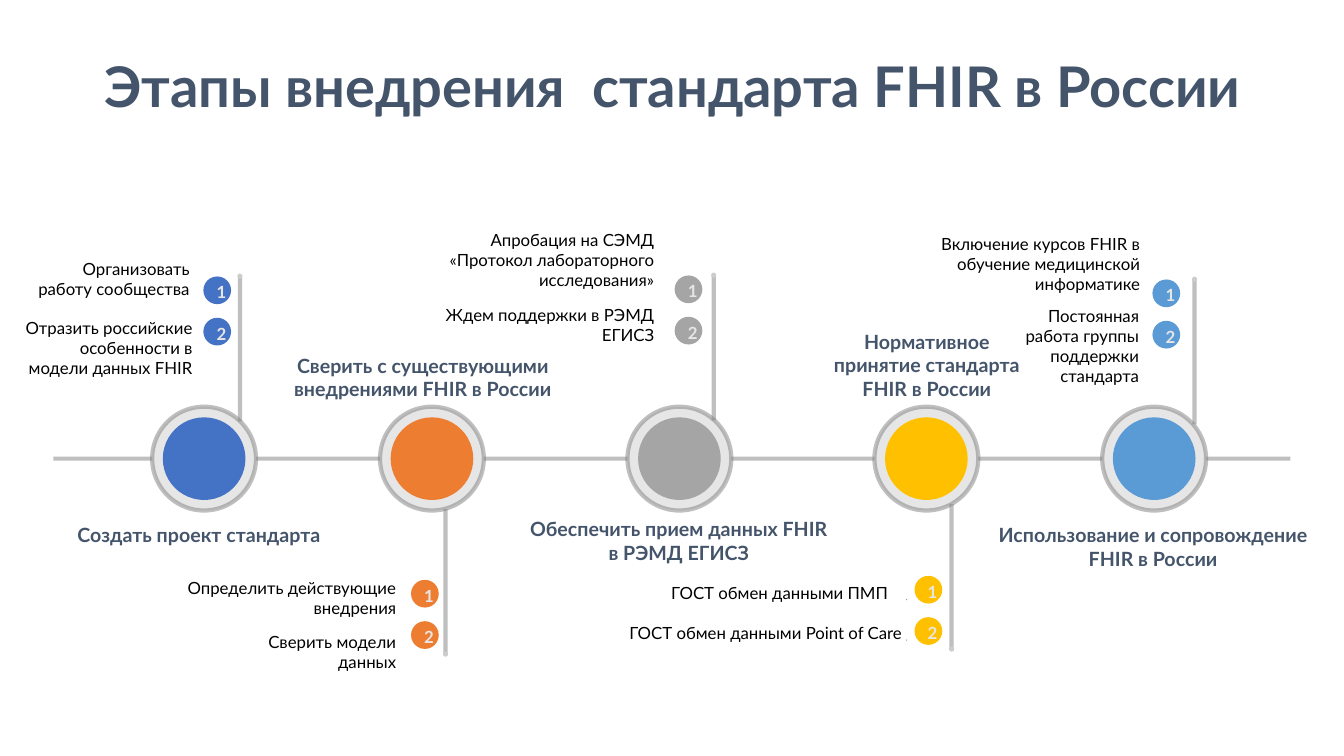
"""Build the slide on the stages of adopting FHIR in Russia."""
from dataclasses import dataclass

import pptx
import pptx.dml.color
import pptx.enum.shapes
import pptx.enum.text
import pptx.oxml.ns
import pptx.util
from lxml import etree


@dataclass(frozen=True)
class Theme:
    face: str = "Lato"
    ink: str = "000000"
    head: str = "44546A"
    pale: str = "E7E6E6"
    rule: str = "808080"
    knob: str = "CCCCCC"
    speck: str = "606060"
    title: int = 40
    stage: int = 14
    note: int = 12
    line: int = 3
    alpha: int = 50000


TITLE = "Этапы внедрения  стандарта FHIR в России"
TITLE_BOX = (6.5, 4.6, 120.4, 7.7)
AXIS = (5.3, 128, 45.5)
RING, DISC, PIP, KNOB, DOT = 10.3, 8.2, 2.75, 0.5, 0.1
STEM, STEP, DIGIT = 14.4, 4.1, 2.1
SPECKS = [(89.95, 59.5), (89.95, 63.5)]

STAGES = [
    dict(hue="4472C4", mid=20.25, stem=(23.8, 41.8, -1), pip=(21.55, 28.8),
         head=("Создать проект стандарта", 6.6, 51.4, 26.3, 1),
         notes=[("Организовать работу сообщества", 1.9, 25.2, 17.9, 2),
                ("Отразить российские особенности в модели данных FHIR",
                 0.6, 31, 19.5, 3)]),
    dict(hue="ED7D31", mid=42.85, stem=(44.2, 50.5, 1), pip=(42.15, 58.9),
         head=("Сверить с существующими внедрениями FHIR в России",
               26.5, 34.6, 30.9, 2),
         notes=[("Определить действующие внедрения", 16.1, 56.8, 24.2, 2),
                ("Сверить модели данных", 24.6, 62.2, 15.7, 2)]),
    dict(hue="A5A5A5", mid=67.4, stem=(70.8, 41.7, -1), pip=(68.3, 28.7),
         head=("Обеспечить прием данных FHIR в РЭМД ЕГИСЗ",
               51.5, 50.8, 31.7, 2),
         notes=[("Апробация на СЭМД «Протокол лабораторного исследования»",
                 41.3, 22.3, 24.6, 3),
                ("Ждем поддержки в РЭМД ЕГИСЗ", 40.4, 29.7, 25.5, 2)]),
    dict(hue="FFC000", mid=91.9, stem=(94.4, 50, 1), pip=(92.1, 58.5),
         head=("Нормативное принятие стандарта FHIR в России",
               81.4, 32.2, 21.1, 3),
         notes=[("ГОСТ обмен данными ПМП", 65.2, 57.3, 23.9, 1),
                ("ГОСТ обмен данными Point of Care", 58.8, 61.3, 31.7, 1)]),
    dict(hue="5B9BD5", mid=114.5, stem=(118.5, 42.1, -1), pip=(115.7, 29.1),
         head=("Использование и сопровождение FHIR в России",
               98, 51.4, 32.8, 2),
         notes=[("Включение курсов FHIR в обучение медицинской информатике",
                 89.9, 22.7, 24.2, 3),
                ("Постоянная работа группы поддержки стандарта",
                 98.3, 29.8, 15.7, 4)]),
]

theme = Theme()
ALIGN = pptx.enum.text.PP_ALIGN
SHAPE = pptx.enum.shapes.MSO_SHAPE
qn = pptx.oxml.ns.qn


def cell(count):
    return pptx.util.Inches(count / 10)


def color(code):
    return pptx.dml.color.RGBColor.from_string(code)


def apply(target, values):
    for name, value in values.items():
        setattr(target, name, value)


def stroke(line):
    apply(line, dict(width=pptx.util.Pt(theme.line)))
    line.fill.solid()
    line.color.rgb = color(theme.rule)
    tint = line._get_or_add_ln().find(".//" + qn("a:srgbClr"))
    etree.SubElement(tint, qn("a:alpha"), val=str(theme.alpha))


def rule(slide, *ends):
    link = slide.shapes.add_connector(
        pptx.enum.shapes.MSO_CONNECTOR.STRAIGHT, *map(cell, ends))
    stroke(link.line)
    etree.SubElement(link._element.spPr, qn("a:effectLst"))


def circle(slide, x, y, size, hue, edged=False):
    box = (x - size / 2, y - size / 2, size, size)
    disc = slide.shapes.add_shape(SHAPE.OVAL, *map(cell, box))
    disc.shadow.inherit = False
    disc.fill.solid()
    disc.fill.fore_color.rgb = color(hue)
    if edged:
        stroke(disc.line)
    else:
        disc.line.fill.background()


def write(frame, text, size, hue, align, bold=True, wrap=True):
    apply(frame, dict(
        text=text, word_wrap=wrap,
        auto_size=pptx.enum.text.MSO_AUTO_SIZE.NONE,
        vertical_anchor=pptx.enum.text.MSO_ANCHOR.TOP))
    para = frame.paragraphs[0]
    para.alignment = align
    apply(para.font, dict(
        name=theme.face, size=pptx.util.Pt(size), bold=bold))
    para.font.color.rgb = color(hue)


def label(slide, item, size, hue, align, bold=True):
    text, x, y, wide, rows = item
    box = (x, y, wide, 1 + rows * size * 0.168)
    frame = slide.shapes.add_textbox(*map(cell, box)).text_frame
    write(frame, text, size, hue, align, bold)


def draw(slide, stage):
    x, start, way = stage["stem"]
    end = start + way * STEM
    circle(slide, stage["mid"], AXIS[2], RING, theme.pale, True)
    circle(slide, stage["mid"], AXIS[2], DISC, stage["hue"])
    rule(slide, x, start, x, end)
    circle(slide, x, end, KNOB, theme.knob)
    label(slide, stage["head"], theme.stage, theme.head, ALIGN.CENTER)
    left, top = stage["pip"]
    for rank, note in enumerate(stage["notes"]):
        y = top + rank * STEP
        circle(slide, left, y, PIP, stage["hue"])
        digit = (str(rank + 1), left - DIGIT / 2, y - 1.3, DIGIT, 1)
        label(slide, digit, theme.note, theme.pale, ALIGN.CENTER)
        label(slide, note, theme.note, theme.ink, ALIGN.RIGHT, False)


def main():
    deck = pptx.Presentation()
    apply(deck, dict(slide_width=cell(133.33), slide_height=cell(75)))
    slide = deck.slides.add_slide(deck.slide_layouts[5])
    title = slide.shapes.title
    sides = ("left", "top", "width", "height")
    apply(title, dict(zip(sides, map(cell, TITLE_BOX))))
    write(title.text_frame, TITLE, theme.title, theme.head,
          ALIGN.CENTER, wrap=False)
    first, last, level = AXIS
    rule(slide, first, level, last, level)
    for stage in STAGES:
        draw(slide, stage)
    for x, y in SPECKS:
        circle(slide, x, y, DOT, theme.speck)
    deck.save("out.pptx")


if __name__ == "__main__":
    main()
